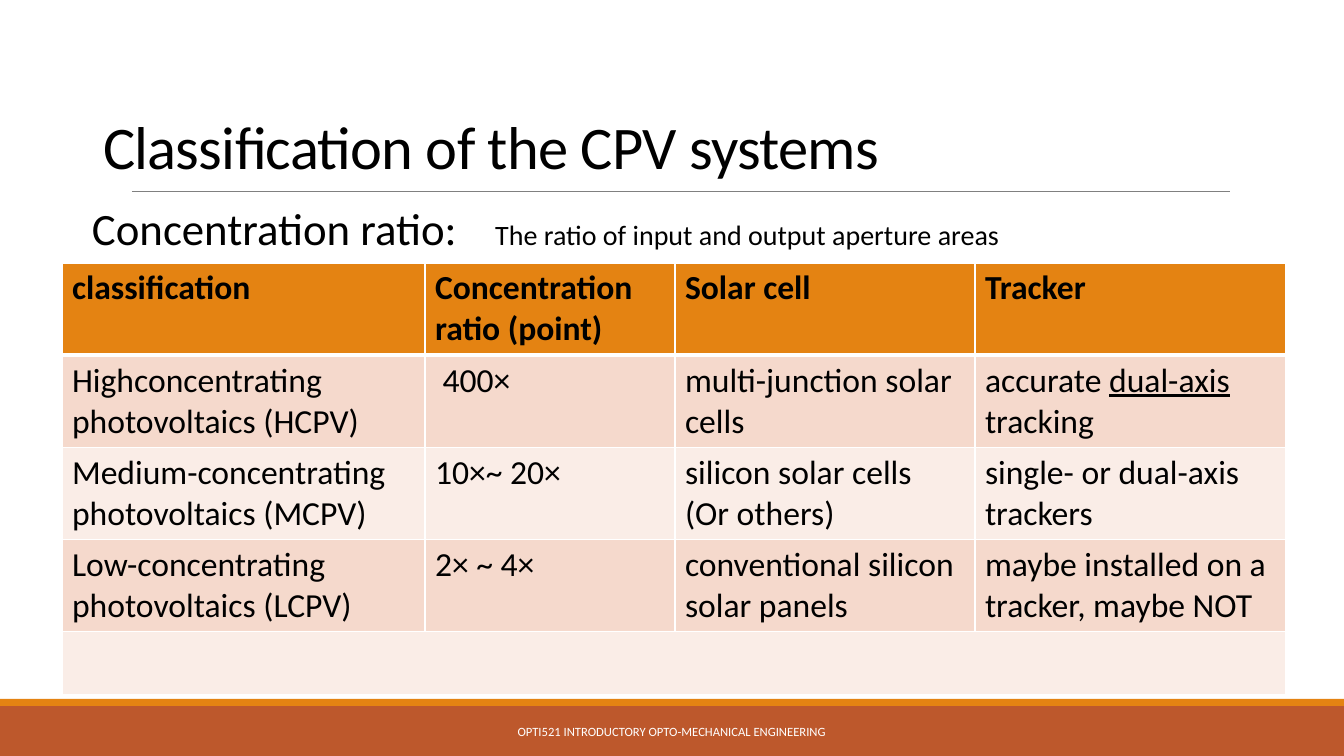
from dataclasses import dataclass

from lxml.etree import SubElement
from pptx import Presentation
from pptx.dml.color import RGBColor
from pptx.enum.shapes import MSO_CONNECTOR, MSO_SHAPE
from pptx.enum.text import MSO_ANCHOR, MSO_AUTO_SIZE, PP_ALIGN
from pptx.oxml.ns import qn
from pptx.util import Emu, Pt

WIDE, HIGH = 1344, 756
SCALE = 12192000 / WIDE


def px(num):
    return Emu(round(num * SCALE))


@dataclass(frozen=True)
class Theme:
    font: str = "Calibri"
    ink: str = "000000"
    white: str = "FFFFFF"
    rust: str = "BD582C"
    amber: str = "E48312"
    rule: str = "808080"
    bands: tuple = ("F5D9CC", "FAEDE7")
    title: float = 43.2
    lead: int = 32
    note: int = 20
    cell: int = 24
    foot: int = 9


class Deck:
    def __init__(self, theme):
        self.theme = theme
        self.prs = Presentation()
        self.prs.slide_width, self.prs.slide_height = px(WIDE), px(HIGH)
        self.slide = self.prs.slides.add_slide(self.prs.slide_layouts[1])
        self.shapes = self.slide.shapes

    def style(self, run, size, color=None, bold=False):
        font = run.font
        font.name, font.size, font.bold = self.theme.font, Pt(size), bold
        font.color.rgb = RGBColor.from_string(color or self.theme.ink)

    def place(self, shape, left, top, width, height):
        shape.left, shape.top = px(left), px(top)
        shape.width, shape.height = px(width), px(height)
        shape.text_frame.auto_size = MSO_AUTO_SIZE.NONE
        shape.text_frame.word_wrap = True
        return shape.text_frame

    def bar(self, top, height, color):
        box = self.shapes.add_shape(
            MSO_SHAPE.RECTANGLE, 0, px(top), px(WIDE), px(height))
        box.shadow.inherit = False
        box.fill.solid()
        box.fill.fore_color.rgb = RGBColor.from_string(color)
        box.line.fill.background()

    def line(self, left, right, top):
        rule = self.shapes.add_connector(
            MSO_CONNECTOR.STRAIGHT, px(left), px(top), px(right), px(top))
        rule.line.color.rgb = RGBColor.from_string(self.theme.rule)
        rule.line.width = Pt(0.5)
        SubElement(rule._element.spPr, qn("a:effectLst"))

    def title(self, text, *area):
        frame = self.place(self.shapes.title, *area)
        frame.vertical_anchor = MSO_ANCHOR.BOTTOM
        frame.text = text
        para = frame.paragraphs[0]
        para.alignment, para.line_spacing = PP_ALIGN.LEFT, 0.85
        run = para.runs[0]
        self.style(run, self.theme.title)
        run.font._element.set("spc", "-50")

    def body(self, lead, note, stop, *area):
        frame = self.place(self.slide.placeholders[1], *area)
        frame.margin_left = frame.margin_right = 0
        frame.vertical_anchor = MSO_ANCHOR.TOP
        para = frame.paragraphs[0]
        para.text = lead
        para.add_run().text = "\t" + note
        for run, size in zip(para.runs, (self.theme.lead, self.theme.note)):
            self.style(run, size)
        para.line_spacing = 0.9
        para.space_before, para.space_after = Pt(12), Pt(2)
        # No bullet; a tab stop sets where the note starts
        props = para._p.get_or_add_pPr()
        props.set("marL", "0")
        props.set("indent", "0")
        SubElement(props, qn("a:buNone"))
        tabs = SubElement(props, qn("a:tabLst"))
        SubElement(tabs, qn("a:tab"), pos=str(px(stop)), algn="l")

    def label(self, text, *area):
        box = self.shapes.add_textbox(*map(px, area))
        frame = self.place(box, *area)
        frame.vertical_anchor = MSO_ANCHOR.MIDDLE
        frame.text = text
        frame.paragraphs[0].alignment = PP_ALIGN.CENTER
        self.style(frame.paragraphs[0].runs[0], self.theme.foot, self.theme.white)

    def edges(self, cell, row):
        props = cell._tc.get_or_add_tcPr()
        thick = {"lnB": 0, "lnT": 1}
        for side in ("lnL", "lnR", "lnT", "lnB"):
            width = Pt(3 if thick.get(side) == row else 1)
            edge = SubElement(props, qn("a:" + side), w=str(width))
            fill = SubElement(edge, qn("a:solidFill"))
            SubElement(fill, qn("a:srgbClr"), val=self.theme.white)

    def cell(self, cell, row, text):
        self.edges(cell, row)
        head = row == 0
        color = self.theme.amber if head else self.theme.bands[(row - 1) % 2]
        cell.fill.solid()
        cell.fill.fore_color.rgb = RGBColor.from_string(color)
        # Underscores mark an underlined part
        parts = text.split("_")
        cell.text_frame.text = parts[0]
        para = cell.text_frame.paragraphs[0]
        for part in parts[1:]:
            para.add_run().text = part
        for para in cell.text_frame.paragraphs:
            for spot, run in enumerate(para.runs):
                self.style(run, self.theme.cell, bold=head)
                run.font.underline = spot % 2 == 1

    def table(self, left, top, cols, rows, data):
        grid = self.shapes.add_table(
            len(rows), len(cols), px(left), px(top),
            px(sum(cols)), px(sum(rows))).table
        grid.horz_banding = False
        for col, width in zip(grid.columns, cols):
            col.width = px(width)
        for row, height in zip(grid.rows, rows):
            row.height = px(height)
        for i, line in enumerate(data):
            for j, text in enumerate(line):
                self.cell(grid.cell(i, j), i, text)
        # The closing row is one empty band
        last = len(rows) - 1
        grid.cell(last, 0).merge(grid.cell(last, len(cols) - 1))
        self.cell(grid.cell(last, 0), last, "")


DATA = [
    ("classification", "Concentration ratio (point)", "Solar cell", "Tracker"),
    ("Highconcentrating photovoltaics (HCPV)", " 400×",
     "multi-junction solar cells", "accurate _dual-axis_ tracking"),
    ("Medium-concentrating photovoltaics (MCPV)", "10×~ 20×",
     "silicon solar cells\n(Or others)", "single- or dual-axis trackers"),
    ("Low-concentrating photovoltaics (LCPV)", "2× ~ 4×",
     "conventional silicon solar panels",
     "maybe installed on a tracker, maybe NOT"),
]


def main():
    theme = Theme()
    deck = Deck(theme)
    # Footer bands and title rule
    deck.bar(706, 50, theme.rust)
    deck.bar(699, 7, theme.amber)
    deck.line(132, 1230, 191)
    # Heading and definition
    deck.title("Classification of the CPV systems", 93, 114, 1159, 73)
    deck.body("Concentration ratio:",
              "The ratio of input and output aperture areas",
              386, 92, 202, 1159, 78)
    # Classes of system
    deck.table(62, 263, (363, 250, 300, 311), (91, 92, 92, 92, 63), DATA)
    # Footer
    deck.label("OPTI521 INTRODUCTORY OPTO-MECHANICAL ENGINEERING",
               406, 712, 531, 40)
    deck.prs.save("out.pptx")


if __name__ == "__main__":
    main()
